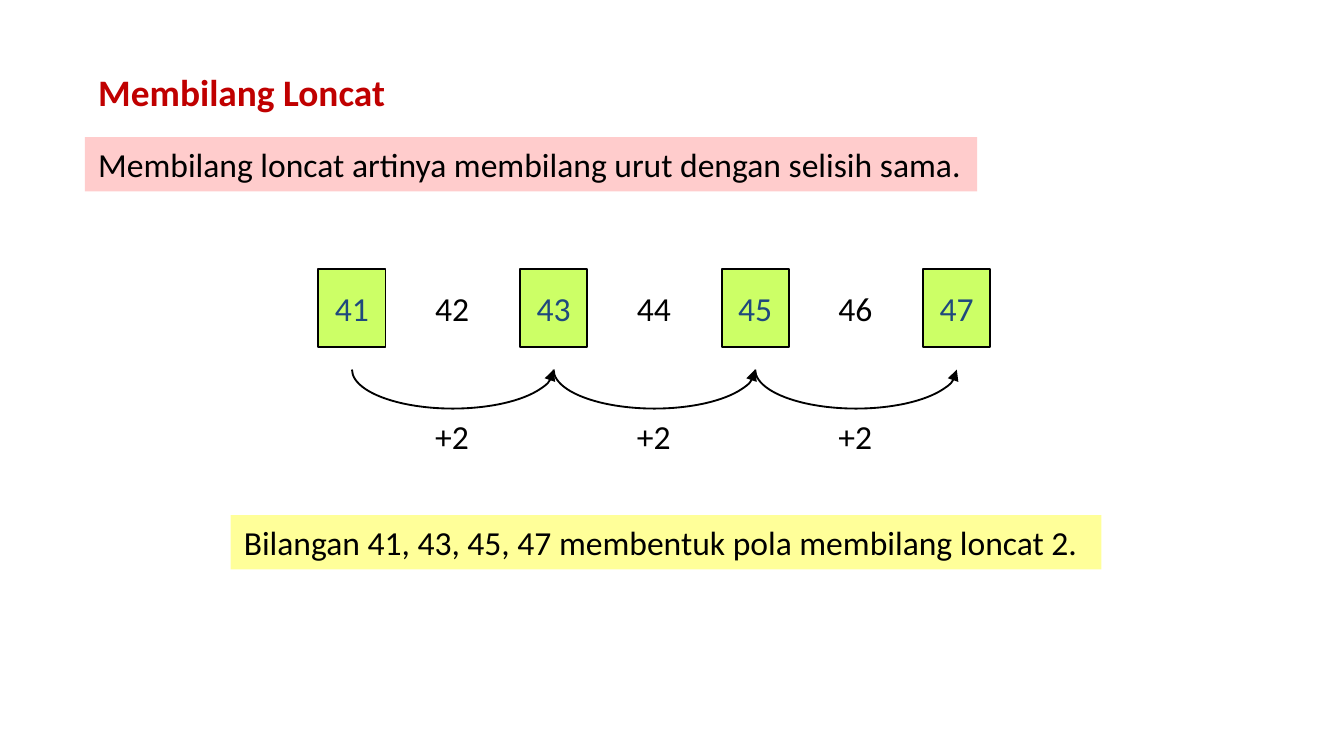
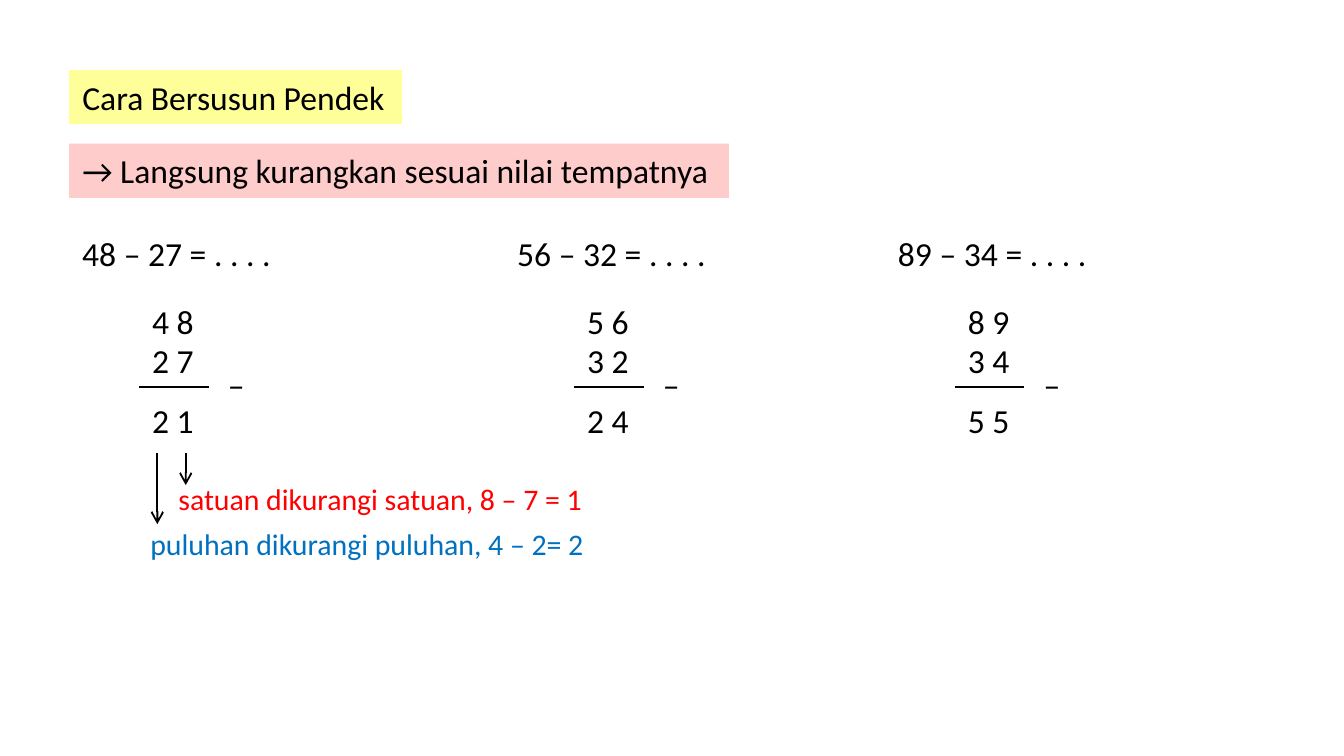
from dataclasses import dataclass

from pptx import Presentation
from pptx.dml.color import RGBColor as Color
from pptx.enum.shapes import MSO_CONNECTOR as Connector, MSO_SHAPE as Preset
from pptx.enum.text import MSO_ANCHOR as Anchor, MSO_AUTO_SIZE as AutoSize, PP_ALIGN as Align
from pptx.oxml.ns import qn
from pptx.oxml.xmlchemy import OxmlElement
from pptx.util import Pt


@dataclass(frozen=True)
class Theme:
    font: str = "Calibri"
    title_size: int = 20
    body_size: int = 18
    note_size: int = 16
    line_width: int = 1
    black: str = "000000"
    title: str = "C00000"
    pink: str = "FFCCCC"
    yellow: str = "FFFF99"
    green: str = "CCFF66"
    navy: str = "1F497D"
    red: str = "FF0000"
    blue: str = "0070C0"


THEME = Theme()
ROW_HEIGHT = 29


# Shared parts
def set_fill(shape, color):
    shape.fill.solid()
    shape.fill.fore_color.rgb = Color.from_string(color)


def set_line(shape):
    shape.line.color.rgb = Color.from_string(THEME.black)
    shape.line.width = Pt(THEME.line_width)


def add_preset(slide, preset, left, top, width, height):
    shape = slide.shapes.add_shape(preset, Pt(left), Pt(top), Pt(width), Pt(height))
    shape.shadow.inherit = False
    return shape


def write(shape, text, size=THEME.body_size, color=THEME.black, bold=False, align=Align.LEFT):
    paragraph = shape.text_frame.paragraphs[0]
    paragraph.alignment = align
    run = paragraph.add_run()
    run.text = text
    run.font.name = THEME.font
    run.font.size = Pt(size)
    run.font.bold = bold
    run.font.color.rgb = Color.from_string(color)


def fit_to_text(shape):
    frame = shape.text_frame
    frame.word_wrap = False
    frame.auto_size = AutoSize.SHAPE_TO_FIT_TEXT
    frame.vertical_anchor = Anchor.TOP


def add_label(slide, text, left, top, width, height=ROW_HEIGHT, **style):
    label = slide.shapes.add_textbox(Pt(left), Pt(top), Pt(width), Pt(height))
    fit_to_text(label)
    write(label, text, **style)


def add_band(slide, text, left, top, width, fill):
    band = add_preset(slide, Preset.RECTANGLE, left, top, width, ROW_HEIGHT)
    set_fill(band, fill)
    band.line.fill.background()
    fit_to_text(band)
    write(band, text)


def add_arrowhead(shape, kind):
    head = OxmlElement("a:tailEnd")
    head.set("type", kind)
    shape.line._get_or_add_ln().append(head)


def add_line(slide, x1, y1, x2, y2, arrowhead=None):
    line = slide.shapes.add_connector(Connector.STRAIGHT, Pt(x1), Pt(y1), Pt(x2), Pt(y2))
    set_line(line)
    line.element.spPr.append(OxmlElement("a:effectLst"))
    if arrowhead:
        add_arrowhead(line, arrowhead)


# Slide 1: skip counting
def add_jump(slide, center, middle, width, height):
    # The arc is drawn upright, then turned a quarter so that it sags
    arc = add_preset(slide, Preset.ARC, center - height / 2, middle - width / 2, height, width)
    arc.adjustments[0] = 162
    arc.adjustments[1] = 54
    arc.rotation = 90
    arc.element.spPr.find(qn("a:xfrm")).set("flipV", "1")
    arc.fill.background()
    set_line(arc)
    add_arrowhead(arc, "triangle")


def add_number_row(slide, left, top, first, last, jump):
    box_width, box_height, label_width, pitch = 36, 41.75, 33, 54
    for index, number in enumerate(range(first, last + 1)):
        center = left + box_width / 2 + index * pitch
        label_left = center - label_width / 2
        if index % jump == 0:
            box = add_preset(slide, Preset.RECTANGLE, center - box_width / 2, top, box_width, box_height)
            set_fill(box, THEME.green)
            set_line(box)
            box.text_frame.vertical_anchor = Anchor.MIDDLE
            write(box, str(number), color=THEME.navy, align=Align.CENTER)
        else:
            add_label(slide, str(number), label_left, top + 6.5, label_width)
            add_jump(slide, center, top + 54, jump * pitch, box_height)
            add_label(slide, f"+{jump}", label_left, top + 75, label_width)


def build_skip_counting(slide):
    add_label(slide, "Membilang Loncat", 45.5, 33.5, 170, 31.5,
              size=THEME.title_size, color=THEME.title, bold=True)
    add_band(slide, "Membilang loncat artinya membilang urut dengan selisih sama.",
             45.5, 73.5, 478, THEME.pink)
    add_number_row(slide, 170.6, 144, first=41, last=47, jump=2)
    add_band(slide, "Bilangan 41, 43, 45, 47 membentuk pola membilang loncat 2.",
             123.5, 276, 466.5, THEME.yellow)


# Slide 2: column subtraction
def add_subtraction(slide, left, top, minuend, subtrahend):
    add_label(slide, f"{minuend} – {subtrahend} = . . . .", left, top, 116.5)
    digits_left, digits_width = left + 37.4, 37.4
    rows = ((minuend, 36), (subtrahend, 57), (minuend - subtrahend, 89.3))
    for number, offset in rows:
        add_label(slide, " ".join(str(number)), digits_left, top + offset, digits_width)
    add_line(slide, digits_left, top + 85.9, digits_left + digits_width, top + 85.9)
    add_label(slide, "–", left + 78, top + 70, 23.5)


def add_place_notes(slide, left, top):
    # Arrow offset, arrow length, note offset, note top, note width
    notes = (
        ("puluhan dikurangi puluhan, 4 – 2= 2", THEME.blue, 10.8, 38.2, 0, 35.5, 249),
        ("satuan dikurangi satuan, 8 – 7 = 1", THEME.red, 26, 17.3, 15, 11.5, 233.5),
    )
    for text, color, arrow_x, length, note_x, note_y, width in notes:
        add_line(slide, left + arrow_x, top, left + arrow_x, top + length, "arrow")
        add_label(slide, text, left + note_x, top + note_y, width, 26.5,
                  size=THEME.note_size, color=color)


def build_column_subtraction(slide):
    left = 37
    add_band(slide, "Cara Bersusun Pendek", left, 37.5, 178.5, THEME.yellow)
    add_band(slide, "→ Langsung kurangkan sesuai nilai tempatnya", left, 77, 353.5, THEME.pink)
    for column_left, minuend, subtrahend in ((left, 48, 27), (270, 56, 32), (474, 89, 34)):
        add_subtraction(slide, column_left, 121.5, minuend, subtrahend)
    add_place_notes(slide, left + 36.5, 242.6)


def main():
    presentation = Presentation()
    presentation.slide_width, presentation.slide_height = Pt(720), Pt(405)
    blank = presentation.slide_layouts[6]
    for build in (build_skip_counting, build_column_subtraction):
        build(presentation.slides.add_slide(blank))
    presentation.save("out.pptx")


if __name__ == "__main__":
    main()
